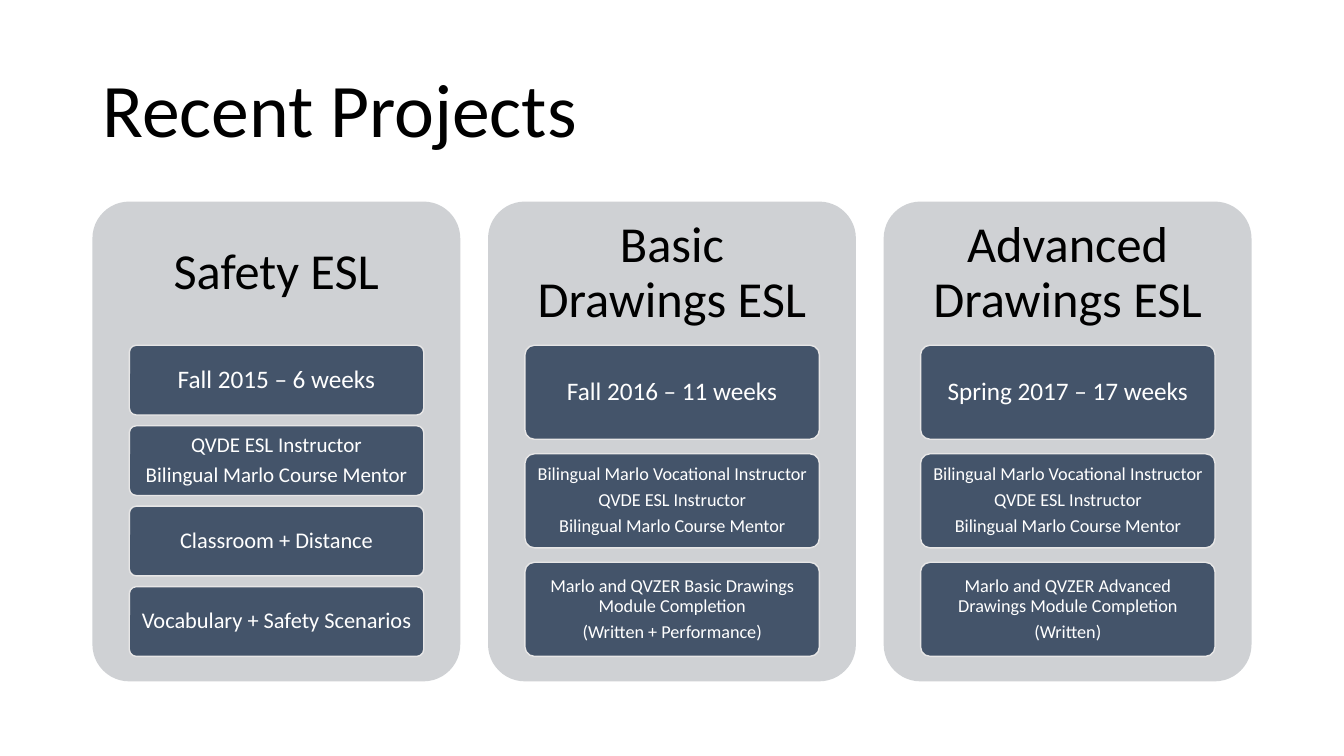
from pptx import Presentation
from pptx.dml.color import RGBColor
from pptx.enum.shapes import MSO_SHAPE
from pptx.enum.text import MSO_ANCHOR, PP_ALIGN
from pptx.util import Cm, Pt

ROUNDED = MSO_SHAPE.ROUNDED_RECTANGLE
MIDDLE = MSO_ANCHOR.MIDDLE
LEFT, CENTER = PP_ALIGN.LEFT, PP_ALIGN.CENTER

PANEL_LEFT, PANEL_TOP, PANEL_W, PANEL_H = 2.33, 5.08, 9.27, 12.09
PANEL_PITCH = 9.97
HEADING_H = 3.63
CARD_INSET, CARD_W = 0.93, 7.42
STACK_TOP, STACK_H = 8.7, 7.84
GAP_RATIO = 2 / 13  # gap between cards as a share of card height

# Heading, then (text size, card text) from top to bottom
PROJECTS = [
    ("Safety ESL", [
        (18, "Fall 2015 – 6 weeks"),
        (15, "QVDE ESL Instructor\nBilingual Marlo Course Mentor"),
        (16, "Classroom + Distance"),
        (16, "Vocabulary + Safety Scenarios"),
    ]),
    ("Basic\vDrawings ESL", [
        (18, "Fall 2016 – 11 weeks"),
        (13, "Bilingual Marlo Vocational Instructor\nQVDE ESL Instructor\n"
             "Bilingual Marlo Course Mentor"),
        (13, "Marlo and QVZER Basic Drawings\vModule Completion\n"
             "(Written + Performance)"),
    ]),
    ("Advanced\vDrawings ESL", [
        (18, "Spring 2017 – 17 weeks"),
        (13, "Bilingual Marlo Vocational Instructor\nQVDE ESL Instructor\n"
             "Bilingual Marlo Course Mentor"),
        (13, "Marlo and QVZER Advanced\vDrawings Module Completion\n(Written)"),
    ]),
]


def rgb(value):
    return RGBColor.from_string(value)


def write(sp, text, size, color="000000", align=CENTER, inset=(0.1, 0.08), after=0.35):
    """Fill a shape with text; inset is (sides, top and bottom) in cm, after a share of size."""
    tf = sp.text_frame
    tf.word_wrap = True
    tf.vertical_anchor = MIDDLE
    tf.margin_left = tf.margin_right = Cm(inset[0])
    tf.margin_top = tf.margin_bottom = Cm(inset[1])
    tf.text = text
    for p in tf.paragraphs:
        p.alignment = align
        p.line_spacing = 0.9
        p.space_after = Pt(size * after)
        for r in p.runs:
            r.font.name = "Calibri"
            r.font.size = Pt(size)
            r.font.color.rgb = rgb(color)


prs = Presentation()
prs.slide_width, prs.slide_height = Cm(33.87), Cm(19.05)
s = prs.slides.add_slide(prs.slide_layouts[6])

title = s.shapes.add_textbox(Cm(2.33), Cm(1.01), Cm(29.21), Cm(3.68))
write(title, "Recent Projects", 54, align=LEFT, inset=(0.25, 0.13), after=0)

for i, (heading, cards) in enumerate(PROJECTS):
    left = PANEL_LEFT + i * PANEL_PITCH
    panel = s.shapes.add_shape(ROUNDED, Cm(left), Cm(PANEL_TOP), Cm(PANEL_W), Cm(PANEL_H))
    panel.adjustments[0] = 0.1
    panel.shadow.inherit = False
    panel.fill.solid()
    panel.fill.fore_color.rgb = rgb("CFD1D4")
    panel.line.fill.background()

    box = s.shapes.add_textbox(Cm(left), Cm(PANEL_TOP), Cm(PANEL_W), Cm(HEADING_H))
    write(box, heading, 36, inset=(0.38, 0.38))

    card_h = STACK_H / (len(cards) + (len(cards) - 1) * GAP_RATIO)
    for j, (size, text) in enumerate(cards):
        top = STACK_TOP + j * card_h * (1 + GAP_RATIO)
        card = s.shapes.add_shape(
            ROUNDED, Cm(left + CARD_INSET), Cm(top), Cm(CARD_W), Cm(card_h))
        card.adjustments[0] = 0.1
        card.shadow.inherit = False
        card.fill.solid()
        card.fill.fore_color.rgb = rgb("44546A")
        card.line.color.rgb = rgb("E7E6E6")
        card.line.width = Pt(1)
        write(card, text, size, "FFFFFF")

prs.save("out.pptx")
